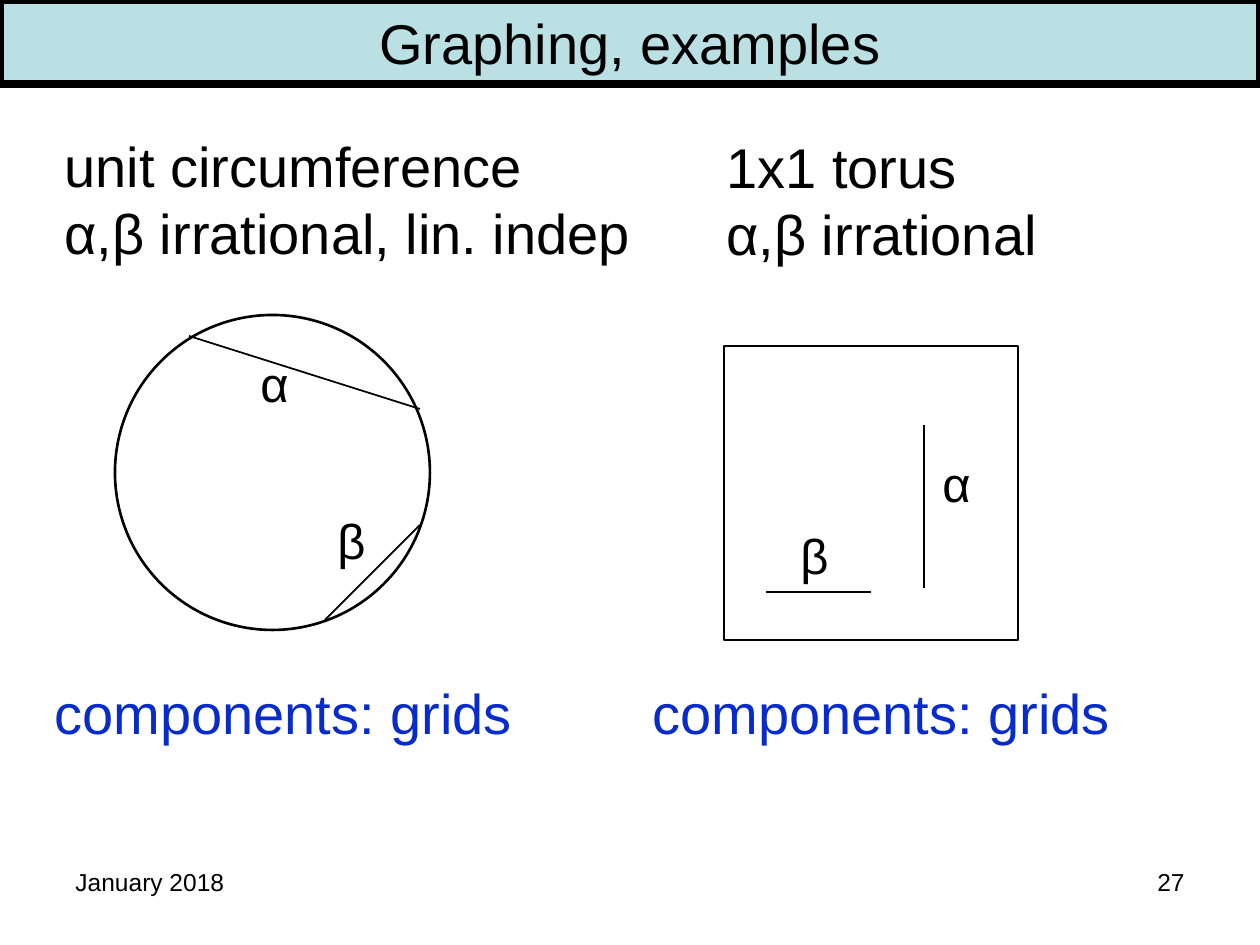
import dataclasses

import pptx
import pptx.dml.color
import pptx.enum.shapes
import pptx.enum.text
import pptx.oxml.ns
import pptx.util
from lxml import etree

ALIGN = pptx.enum.text.PP_ALIGN
ANCHOR = pptx.enum.text.MSO_ANCHOR
SHAPE = pptx.enum.shapes.MSO_SHAPE
PIXELS_PER_INCH = 126


@dataclasses.dataclass(frozen=True)
class Theme:
    """Hold the colours, type sizes and line widths of the slide."""

    font: str = "Arial"
    ink: str = "000000"
    accent: str = "072CCB"
    banner: str = "BBE0E3"
    body_size: int = 32
    label_size: int = 28
    footer_size: int = 14
    banner_line: float = 4.5
    outline: float = 1.5
    segment: float = 1


THEME = Theme()


def px(length):
    """Turn pixels into EMU."""
    return pptx.util.Emu(round(length * 914400 / PIXELS_PER_INCH))


def colour(value):
    """Return the colour for a hex value."""
    return pptx.dml.color.RGBColor.from_string(value)


def write_text(frame, text, size=THEME.body_size, ink=THEME.ink, align=ALIGN.LEFT):
    """Fill a text frame with one paragraph for each line of text."""
    frame.text = text
    for paragraph in frame.paragraphs:
        paragraph.alignment = align
        paragraph.font.name = THEME.font
        paragraph.font.size = pptx.util.Pt(size)
        paragraph.font.color.rgb = colour(ink)


def add_text(shapes, box, text, wrap=False, **text_format):
    """Add a text box, hugging its text unless it wraps."""
    frame = shapes.add_textbox(*map(px, box)).text_frame
    frame.word_wrap = wrap
    if not wrap:
        frame.auto_size = pptx.enum.text.MSO_AUTO_SIZE.SHAPE_TO_FIT_TEXT
    write_text(frame, text, **text_format)


def add_outline(shapes, kind, box, width=THEME.outline, fill=None):
    """Add an outlined preset shape with an optional fill."""
    shape = shapes.add_shape(kind, *map(px, box))
    shape.shadow.inherit = False
    if fill:
        shape.fill.solid()
        shape.fill.fore_color.rgb = colour(fill)
    else:
        shape.fill.background()
    shape.line.color.rgb = colour(THEME.ink)
    shape.line.width = pptx.util.Pt(width)
    return shape


def add_segment(shapes, start, end):
    """Add a thin straight line between two points."""
    connector = shapes.add_connector(
        pptx.enum.shapes.MSO_CONNECTOR.STRAIGHT, *map(px, start + end)
    )
    connector.line.color.rgb = colour(THEME.ink)
    connector.line.width = pptx.util.Pt(THEME.segment)
    properties = connector._element.spPr
    etree.SubElement(properties, pptx.oxml.ns.qn("a:effectLst"))


def add_diagram(shapes, kind, box, segments):
    """Add a grouped outline with its labelled segments."""
    members = shapes.add_group_shape().shapes
    add_outline(members, kind, box)
    for start, end, label, label_box in segments:
        add_segment(members, start, end)
        add_text(members, label_box, label, size=THEME.label_size)


def add_banner(shapes, title):
    """Add the title banner across the top."""
    banner = add_outline(
        shapes, SHAPE.RECTANGLE, (0, 0, 1260, 84), THEME.banner_line, THEME.banner
    )
    banner.text_frame.vertical_anchor = ANCHOR.MIDDLE
    write_text(banner.text_frame, title, align=ALIGN.CENTER)


def add_footer(shapes, date, number):
    """Add the date at the left and the slide number at the right."""
    for left, text, align in ((63, date, ALIGN.LEFT), (903, number, ALIGN.RIGHT)):
        add_text(
            shapes, (left, 861, 294, 66), text,
            wrap=True, size=THEME.footer_size, align=align,
        )


def main():
    """Build and save the slide."""
    presentation = pptx.Presentation()
    presentation.slide_width, presentation.slide_height = px(1260), px(945)
    slide = presentation.slides.add_slide(presentation.slide_layouts[6])
    shapes = slide.shapes

    add_banner(shapes, "Graphing, examples")
    add_footer(shapes, "January 2018", "27")

    add_text(shapes, (52, 125, 597, 149), "unit circumference\nα,β irrational, lin. indep")
    add_diagram(shapes, SHAPE.OVAL, (115, 315, 315, 315), (
        ((189, 336), (420, 409), "α", (248, 347, 57, 72)),
        ((420, 525), (325, 620), "β", (325, 504, 53, 72)),
    ))

    add_text(shapes, (714, 126, 340, 149), "1x1 torus\nα,β irrational")
    add_diagram(shapes, SHAPE.RECTANGLE, (724, 346, 294, 294), (
        ((924, 425), (924, 588), "α", (930, 447, 57, 72)),
        ((766, 592), (871, 592), "β", (788, 519, 53, 72)),
    ))

    for left in (42, 640):
        add_text(shapes, (left, 672, 486, 81), "components: grids", ink=THEME.accent)

    presentation.save("out.pptx")


if __name__ == "__main__":
    main()
